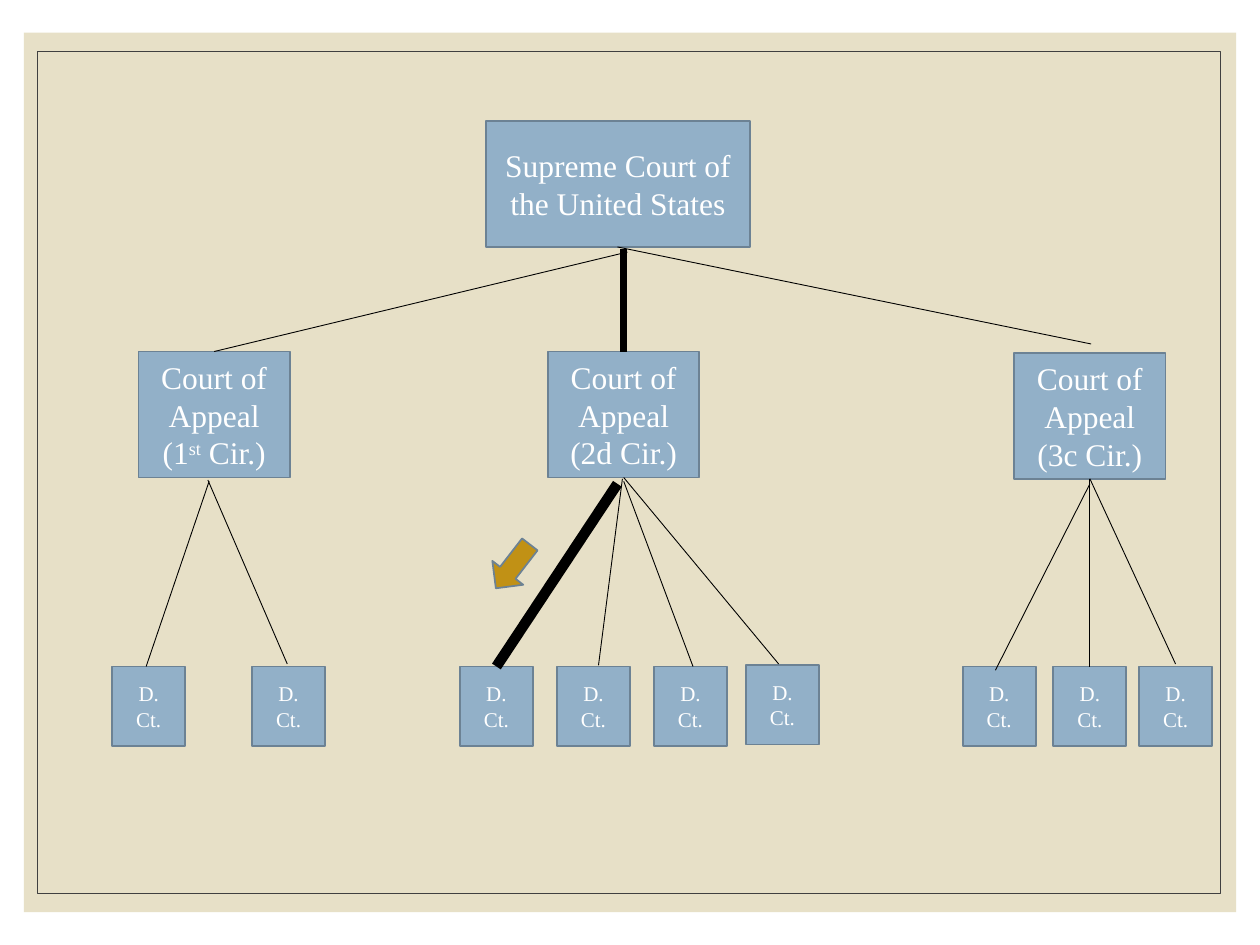
from dataclasses import dataclass

from lxml import etree
from pptx import Presentation
from pptx.dml.color import RGBColor
from pptx.enum.shapes import MSO_CONNECTOR, MSO_SHAPE
from pptx.enum.text import MSO_ANCHOR, PP_ALIGN
from pptx.oxml.ns import qn
from pptx.util import Inches, Pt

RECTANGLE = MSO_SHAPE.RECTANGLE
RIGHT_ARROW = MSO_SHAPE.RIGHT_ARROW
STRAIGHT = MSO_CONNECTOR.STRAIGHT
MIDDLE = MSO_ANCHOR.MIDDLE
CENTER = PP_ALIGN.CENTER


@dataclass(frozen=True)
class Theme:
    font: str = "Times New Roman"
    panel: str = "E7E0C7"
    frame: str = "404040"
    court: str = "92B0C8"
    outline: str = "6C8294"
    text: str = "FFFFFF"
    link: str = "000000"
    arrow: str = "C19115"
    court_size: float = 18
    district_size: float = 12
    thin: float = 0.5
    border: float = 1
    trunk: float = 4.25
    branch: float = 6


THEME = Theme()
APPEAL_WIDTH, APPEAL_HEIGHT = 1.2, 1
DISTRICT_WIDTH, DISTRICT_HEIGHT = 0.58, 0.63

CIRCUITS = [
    {
        "box": (1.1, 2.79, APPEAL_WIDTH, APPEAL_HEIGHT),
        "name": [("(1", 0), ("st", 30), (" Cir.)", 0)],
        "districts": [(0.89, 5.29), (2, 5.29)],
        "links": [
            ((1.66, 3.82), (1.16, 5.29), THEME.thin),
            ((1.65, 3.81), (2.28, 5.27), THEME.thin),
        ],
    },
    {
        "box": (4.35, 2.79, APPEAL_WIDTH, APPEAL_HEIGHT),
        "name": [("(2d Cir.)", 0)],
        "districts": [(3.65, 5.29), (4.42, 5.29), (5.19, 5.29), (5.92, 5.28)],
        "links": [
            ((4.9, 3.84), (3.94, 5.29), THEME.branch),
            ((4.94, 3.8), (4.75, 5.28), THEME.thin),
            ((4.95, 3.82), (5.5, 5.29), THEME.thin),
            ((4.95, 3.79), (6.18, 5.27), THEME.thin),
        ],
    },
    {
        "box": (8.05, 2.8, APPEAL_WIDTH, APPEAL_HEIGHT),
        "name": [("(3c Cir.)", 0)],
        "districts": [(7.64, 5.29), (8.36, 5.29), (9.04, 5.29)],
        "links": [
            ((8.65, 3.84), (7.9, 5.32), THEME.thin),
            ((8.65, 3.8), (8.65, 5.29), THEME.thin),
            ((8.65, 3.8), (9.33, 5.27), THEME.thin),
        ],
    },
]

SUPREME_LINKS = [
    ((4.98, 2), (1.7, 2.79), THEME.thin),
    ((4.95, 1.98), (4.95, 2.79), THEME.trunk),
    ((4.9, 1.96), (8.66, 2.73), THEME.thin),
]


def add_box(slide, box, kind=RECTANGLE, fill=None, line=None, line_width=THEME.border):
    shape = slide.shapes.add_shape(kind, *map(Inches, box))
    shape.shadow.inherit = False
    if fill:
        shape.fill.solid()
        shape.fill.fore_color.rgb = RGBColor.from_string(fill)
    else:
        shape.fill.background()
    if line:
        shape.line.color.rgb = RGBColor.from_string(line)
        shape.line.width = Pt(line_width)
    else:
        shape.line.fill.background()
    return shape


def add_court(slide, box, paragraphs, size):
    shape = add_box(slide, box, fill=THEME.court, line=THEME.outline)
    frame = shape.text_frame
    frame.word_wrap = True
    frame.vertical_anchor = MIDDLE
    for index, runs in enumerate(paragraphs):
        paragraph = frame.add_paragraph() if index else frame.paragraphs[0]
        paragraph.alignment = CENTER
        for text, raised in runs:
            run = paragraph.add_run()
            run.text = text
            run.font.name = THEME.font
            run.font.size = Pt(size)
            run.font.color.rgb = RGBColor.from_string(THEME.text)
            if raised:
                run.font._element.set("baseline", str(raised * 1000))


def add_links(slide, links):
    for start, end, width in links:
        connector = slide.shapes.add_connector(STRAIGHT, *map(Inches, start + end))
        connector.line.color.rgb = RGBColor.from_string(THEME.link)
        connector.line.width = Pt(width)
        etree.SubElement(connector._element.spPr, qn("a:effectLst"))


def add_background(slide, box):
    left, top, width, height = box
    add_box(slide, box, fill=THEME.panel)
    inner = (left + 0.11, top + 0.15, width - 0.23, height - 0.3)
    add_box(slide, inner, line=THEME.frame, line_width=THEME.thin)


def add_circuit(slide, circuit):
    paragraphs = [[("Court of Appeal", 0)], circuit["name"]]
    add_court(slide, circuit["box"], paragraphs, THEME.court_size)
    for left, top in circuit["districts"]:
        box = (left, top, DISTRICT_WIDTH, DISTRICT_HEIGHT)
        add_court(slide, box, [[("D. Ct.", 0)]], THEME.district_size)
    add_links(slide, circuit["links"])


def add_path_arrow(slide, box):
    arrow = add_box(slide, box, RIGHT_ARROW, THEME.arrow, THEME.outline)
    arrow.rotation = 127.7


def main():
    presentation = Presentation()
    presentation.slide_width = Inches(10)
    presentation.slide_height = Inches(7.5)
    slide = presentation.slides.add_slide(presentation.slide_layouts[6])
    add_background(slide, (0.19, 0.26, 9.62, 6.98))
    supreme_name = [[("Supreme Court of the United States", 0)]]
    add_court(slide, (3.86, 0.96, 2.09, 1), supreme_name, THEME.court_size)
    for circuit in CIRCUITS:
        add_circuit(slide, circuit)
    add_links(slide, SUPREME_LINKS)
    add_path_arrow(slide, (3.85, 4.34, 0.44, 0.31))
    presentation.save("out.pptx")


if __name__ == "__main__":
    main()
